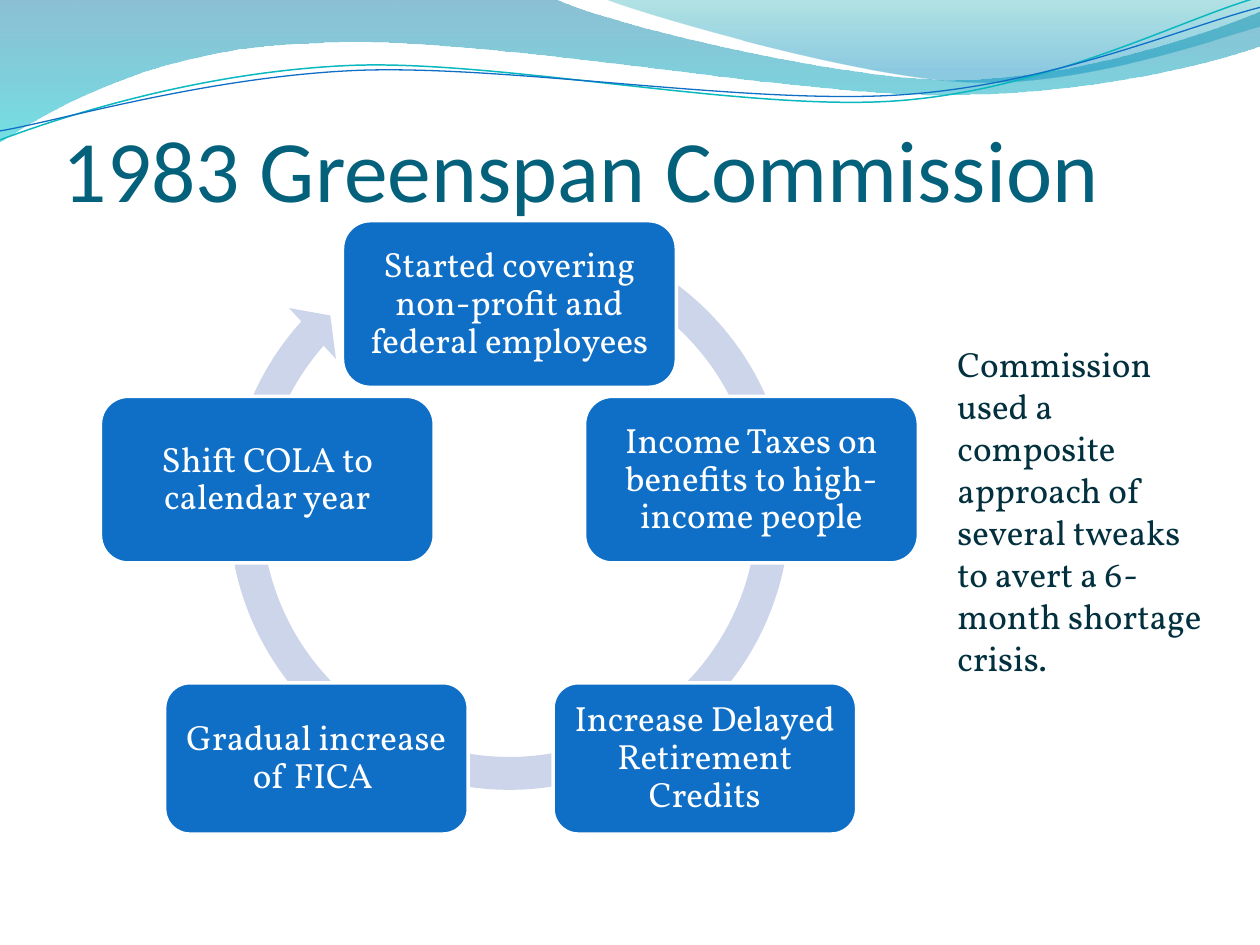
import itertools
import math

import lxml.etree
import pptx
import pptx.dml.color
import pptx.enum.shapes
import pptx.enum.text
import pptx.oxml.ns
import pptx.util

Cm = pptx.util.Cm
Pt = pptx.util.Pt
RGBColor = pptx.dml.color.RGBColor
ShapeKind = pptx.enum.shapes.MSO_SHAPE
Anchor = pptx.enum.text.MSO_ANCHOR
qn = pptx.oxml.ns.qn

WHITE = RGBColor(0xFF, 0xFF, 0xFF)
BLUE = RGBColor(0x0F, 0x6F, 0xC6)
TEAL = RGBColor(0x0A, 0xB8, 0xBF)
RING = RGBColor(0xCC, 0xD5, 0xEA)
TITLE = RGBColor(0x04, 0x61, 0x7B)
BODY = RGBColor(0x02, 0x30, 0x3E)
DEEP_BLUE = RGBColor(0x00, 0x74, 0xA1)
AQUA = RGBColor(0x00, 0xC6, 0xCF)
SEA_GREEN = RGBColor(0x00, 0xA1, 0xA9)
SKY_BLUE = RGBColor(0x00, 0x8B, 0xBF)

STRAND_TILT = -2.7
CYCLE_AXIS = 10.27
LARGE_NODE = (6.73, 3.36)
SMALL_NODE = (6.12, 3.05)

LEFT_WAVE = [
    [(0, 0)],
    [(11.18, -0.03)],
    [(12.09, 0.43), (16.87, 1.6), (19.25, 1.6)],
    [(21.67, 1.6), (24.33, 0.66), (25.4, 0.23)],
    [(25.43, 0.91)],
    [(24.97, 1.12), (22.1, 1.93), (18.95, 1.91)],
    [(15.8, 1.91), (9.7, 0.71), (6.53, 0.86)],
    [(3.25, 0.91), (1.17, 2.11), (-0.03, 2.87)],
]
RIGHT_WAVE = [
    [(12.17, -0.03)],
    [(12.93, 0.28), (17.32, 1.57), (19.53, 1.65)],
    [(21.74, 1.75), (24.41, 0.81), (25.4, 0.53)],
    [(25.4, 0)],
]
TEAL_STRAND = [
    [(0, 2.82)],
    [(1.22, 2.36), (4.01, 1.45), (7.04, 1.32)],
    [(10.03, 1.19), (15.06, 2.26), (18.11, 2.03)],
    [(21.16, 1.8), (23.83, 0.38), (25.35, -0.05)],
]
BLUE_STRAND = [
    [(0, 2.64)],
    [(1.19, 2.44), (4.17, 1.55), (7.19, 1.42)],
    [(10.24, 1.3), (15.16, 2.13), (18.21, 1.91)],
    [(21.23, 1.7), (23.9, 0.53), (25.4, 0.15)],
]
REFORMS = [
    ("Started covering non-profit and federal employees", 0, 6.13, LARGE_NODE),
    ("Income Taxes on benefits to high-income people", 4.88, 9.67, LARGE_NODE),
    ("Increase Delayed Retirement Credits", 3.94, 15.29, SMALL_NODE),
    ("Gradual increase of FICA ", -3.89, 15.29, SMALL_NODE),
    ("Shift COLA to calendar year", -4.88, 9.67, LARGE_NODE),
]


def add_outline(slide, segments, closed):
    start, *rest = [(Cm(x), Cm(y)) for x, y in itertools.chain(*segments)]
    builder = slide.shapes.build_freeform(*start)
    builder.add_line_segments(rest, close=closed)
    outline = builder.convert_to_shape()
    outline.shadow.inherit = False
    route = next(outline._element.iter(qn("a:path")))
    steps = iter(route.findall(qn("a:lnTo")))
    for segment in segments[1:]:
        lines = list(itertools.islice(steps, len(segment)))
        if len(lines) == 3:
            curve = lxml.etree.Element(qn("a:cubicBezTo"))
            lines[0].addprevious(curve)
            for line in lines:
                curve.append(line[0])
                route.remove(line)
    return outline


def add_wave(slide, segments, stops):
    wave = add_outline(slide, segments, True)
    wave.line.fill.background()
    wave.fill.gradient()
    wave.fill.gradient_angle = 270
    for stop, (position, color, _) in zip(wave.fill.gradient_stops, stops):
        stop.position = position
        stop.color.rgb = color
    colors = wave._element.spPr.iter(qn("a:srgbClr"))
    for color_xml, (_, _, opacity) in zip(colors, stops):
        lxml.etree.SubElement(color_xml, qn("a:alpha")).set("val", str(opacity * 1000))


def turn(point, pivot, degrees):
    cosine, sine = math.cos(math.radians(degrees)), math.sin(math.radians(degrees))
    x, y = point[0] - pivot[0], point[1] - pivot[1]
    return pivot[0] + x * cosine - y * sine, pivot[1] + x * sine + y * cosine


def add_strand(slide, segments, pivot, color, width):
    level = [[turn(point, pivot, -STRAND_TILT) for point in segment]
             for segment in segments]
    strand = add_outline(slide, level, False)
    strand.rotation = STRAND_TILT
    strand.fill.background()
    strand.line.color.rgb = color
    strand.line.width = Pt(width)


def write(frame, text, font_name, size, color):
    frame.word_wrap = True
    paragraph = frame.paragraphs[0]
    paragraph.text = text
    paragraph.font.name = font_name
    paragraph.font.size = Pt(size)
    paragraph.font.color.rgb = color
    return paragraph


def add_title(slide, text):
    frame = slide.shapes.add_textbox(Cm(1.27), Cm(1.27), Cm(22.86), Cm(3.17)).text_frame
    frame.margin_left = frame.margin_right = frame.margin_bottom = 0
    frame.vertical_anchor = Anchor.BOTTOM
    write(frame, text, "Calibri", 50, TITLE)


def add_ring(slide):
    ring = slide.shapes.add_shape(
        ShapeKind.CIRCULAR_ARROW, Cm(4.25), Cm(4.25), Cm(12.04), Cm(12.04))
    ring.shadow.inherit = False
    for index, value in enumerate((0.055, 3.307, 133.063, 176.789, 0.058)):
        ring.adjustments[index] = value
    ring.fill.solid()
    ring.fill.fore_color.rgb = RING
    ring.line.fill.background()


def add_reform(slide, text, offset, middle, size):
    width, height = size
    reform = slide.shapes.add_shape(
        ShapeKind.ROUNDED_RECTANGLE,
        Cm(CYCLE_AXIS + offset - width / 2), Cm(middle - height / 2),
        Cm(width), Cm(height))
    reform.shadow.inherit = False
    reform.fill.solid()
    reform.fill.fore_color.rgb = BLUE
    reform.line.color.rgb = WHITE
    reform.line.width = Pt(2)
    frame = reform.text_frame
    frame.margin_left = frame.margin_right = Cm(0.2)
    frame.margin_top = frame.margin_bottom = Cm(0.2)
    frame.vertical_anchor = Anchor.MIDDLE
    paragraph = write(frame, text, "Vollkorn", 20, WHITE)
    paragraph.alignment = pptx.enum.text.PP_ALIGN.CENTER
    paragraph.line_spacing = 0.9


def add_comment(slide, text):
    frame = slide.shapes.add_textbox(Cm(19.05), Cm(6.78), Cm(5.72), Cm(5.38)).text_frame
    write(frame, text, "Vollkorn", 20, BODY)
    frame.auto_size = pptx.enum.text.MSO_AUTO_SIZE.SHAPE_TO_FIT_TEXT


def main():
    deck = pptx.Presentation()
    deck.slide_width, deck.slide_height = Cm(25.4), Cm(19.05)
    slide = deck.slides.add_slide(deck.slide_layouts[6])
    add_wave(slide, LEFT_WAVE, [(0, DEEP_BLUE, 45), (1, AQUA, 55)])
    add_wave(slide, RIGHT_WAVE, [(0, SEA_GREEN, 30), (0.8, SKY_BLUE, 45)])
    add_strand(slide, TEAL_STRAND, (12.67, 1.46), TEAL, 0.85)
    add_strand(slide, BLUE_STRAND, (12.69, 1.5), BLUE, 0.75)
    add_title(slide, "1983 Greenspan Commission")
    add_ring(slide)
    for reform in REFORMS:
        add_reform(slide, *reform)
    add_comment(slide, "Commission used a composite approach of several tweaks "
                       "to avert a 6-month shortage crisis.")
    deck.save("out.pptx")


if __name__ == "__main__":
    main()
